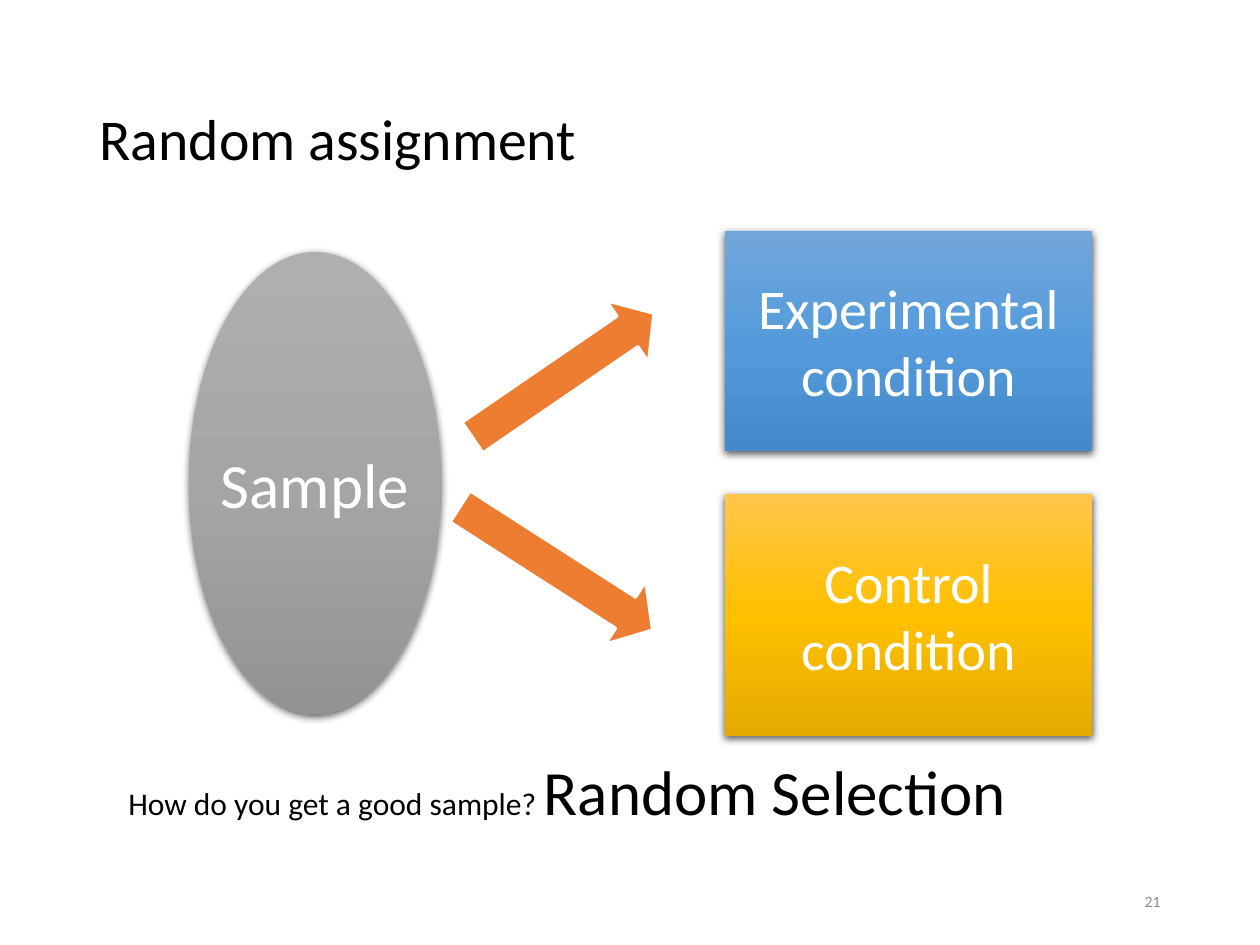
"""Build the random assignment slide: a sample split into two conditions."""
from lxml import etree
from pptx import Presentation
from pptx.dml.color import RGBColor
from pptx.enum.shapes import MSO_SHAPE
from pptx.enum.text import MSO_ANCHOR, MSO_AUTO_SIZE, PP_ALIGN
from pptx.oxml import parse_xml
from pptx.oxml.ns import nsdecls, qn
from pptx.util import Inches, Pt

OVAL, RECTANGLE, ARROW = MSO_SHAPE.OVAL, MSO_SHAPE.RECTANGLE, MSO_SHAPE.RIGHT_ARROW
LEFT, CENTER, RIGHT = PP_ALIGN.LEFT, PP_ALIGN.CENTER, PP_ALIGN.RIGHT
MIDDLE = MSO_ANCHOR.MIDDLE
NO_FIT, GROW = MSO_AUTO_SIZE.NONE, MSO_AUTO_SIZE.SHAPE_TO_FIT_TEXT

THEME = {
    "font": "Calibri",
    "text": "000000", "light": "FFFFFF", "muted": "8C8C8C", "arrow": "ED7D31",
    "gray": ("AFAFAF", "A5A5A5", "939393"),
    "blue": ("71A6DB", "559BDB", "448ACA"),
    "gold": ("FFC64B", "FFC000", "E3AB00"),
    "title_size": 33, "large_size": 36, "box_size": 32, "body_size": 18, "number_size": 9,
}


def add_run(paragraph, text, size, color):
    run = paragraph.add_run()
    run.text = text
    run.font.name = THEME["font"]
    run.font.size = Pt(THEME[size])
    run.font.color.rgb = RGBColor.from_string(THEME[color])


def add_gradient_and_shadow(shape, colors):
    properties = shape.fill._xPr
    gradient = parse_xml(f'<a:gradFill {nsdecls("a")} rotWithShape="1"><a:gsLst/>'
                         '<a:lin ang="5400000" scaled="0"/></a:gradFill>')
    for position, color in zip((0, 50000, 100000), colors):
        stop = etree.SubElement(gradient[0], qn("a:gs"), pos=str(position))
        etree.SubElement(stop, qn("a:srgbClr"), val=color)
    properties.append(gradient)
    shape.line.fill.background()
    properties.append(parse_xml(
        f'<a:effectLst {nsdecls("a")}><a:outerShdw blurRad="{Pt(4.5)}" dist="{Pt(1.5)}" '
        'dir="5400000" algn="ctr" rotWithShape="0"><a:srgbClr val="000000">'
        '<a:alpha val="63000"/></a:srgbClr></a:outerShdw></a:effectLst>'))


presentation = Presentation()
presentation.slide_width, presentation.slide_height = Inches(10), Inches(7.5)
slide = presentation.slides.add_slide(presentation.slide_layouts[5])

title = slide.shapes.title
title.left, title.top, title.width, title.height = map(Inches, (0.69, 0.4, 8.62, 1.45))
title.text_frame.auto_size = NO_FIT
title.text_frame.vertical_anchor = MIDDLE
paragraph = title.text_frame.paragraphs[0]
paragraph.alignment = LEFT
paragraph.line_spacing = 0.9
add_run(paragraph, "Random assignment", "title_size", "text")

number_box = slide.shapes.add_textbox(*map(Inches, (7.06, 6.95, 2.25, 0.4)))
number_box.text_frame.word_wrap = True
number_box.text_frame.vertical_anchor = MIDDLE
paragraph = number_box.text_frame.paragraphs[0]
paragraph.alignment = RIGHT
add_run(paragraph, "21", "number_size", "muted")

groups = (
    (OVAL, (1.5, 2, 2, 3.67), "gray", "large_size", ("Sample",)),
    (RECTANGLE, (5.75, 1.83, 2.92, 1.75), "blue", "box_size", ("Experimental", "condition")),
    (RECTANGLE, (5.75, 3.92, 2.92, 1.92), "gold", "box_size", ("Control", "condition")),
)
for kind, place, colors, size, lines in groups:
    shape = slide.shapes.add_shape(kind, *map(Inches, place))
    add_gradient_and_shadow(shape, THEME[colors])
    frame = shape.text_frame
    frame.word_wrap = False
    frame.vertical_anchor = MIDDLE
    for index, line in enumerate(lines):
        paragraph = frame.add_paragraph() if index else frame.paragraphs[0]
        paragraph.alignment = CENTER
        add_run(paragraph, line, size, "light")

for place, rotation in (((3.6, 2.69, 1.74, 0.58), 325.6), ((3.51, 4.22, 1.81, 0.58), 32.7)):
    arrow = slide.shapes.add_shape(ARROW, *map(Inches, place))
    arrow.rotation = rotation
    arrow.adjustments[0], arrow.adjustments[1] = 0.5, 0.43
    arrow.shadow.inherit = False
    arrow.fill.solid()
    arrow.fill.fore_color.rgb = RGBColor.from_string(THEME["arrow"])
    arrow.line.color.rgb = RGBColor.from_string(THEME["light"])
    arrow.line.width = Pt(1.5)

question = slide.shapes.add_textbox(*map(Inches, (0.92, 5.92, 7.36, 0.71)))
question.text_frame.word_wrap = False
question.text_frame.auto_size = GROW
paragraph = question.text_frame.paragraphs[0]
add_run(paragraph, "How do you get a good sample? ", "body_size", "text")
add_run(paragraph, "Random Selection", "large_size", "text")

presentation.save("out.pptx")
